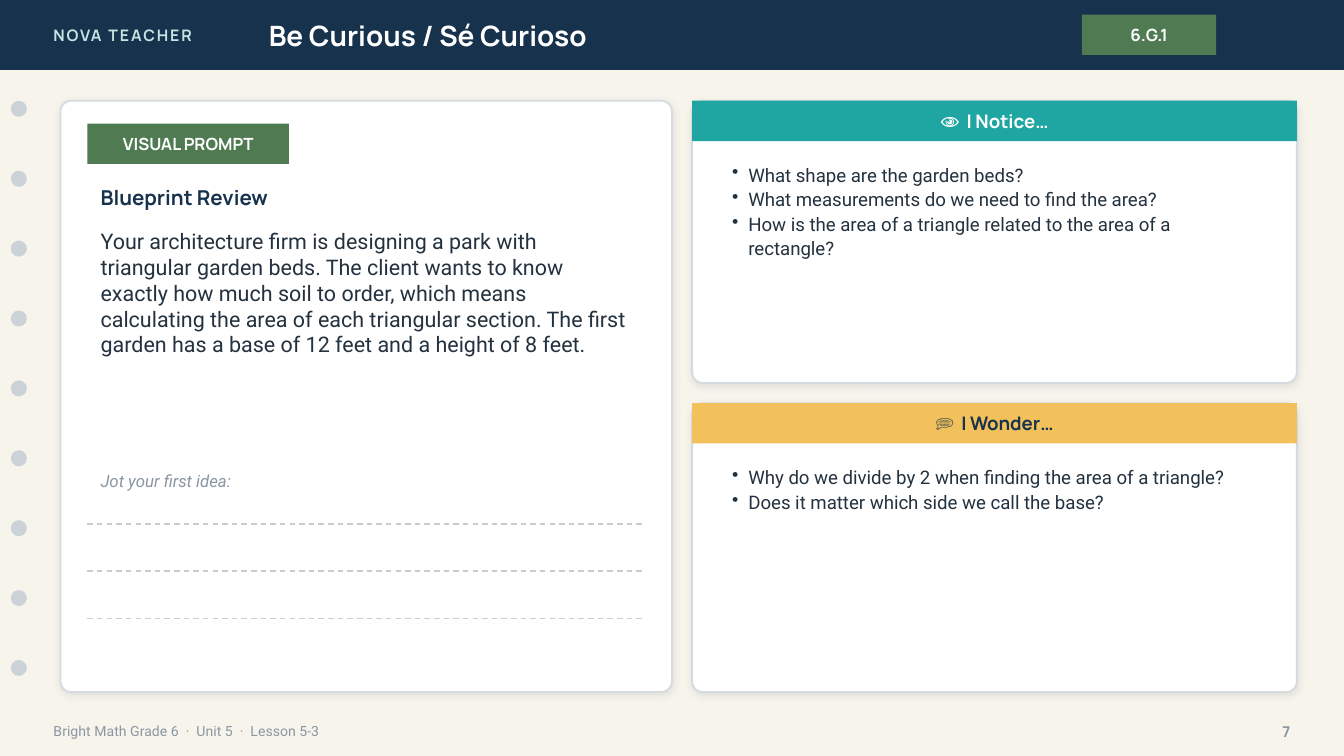
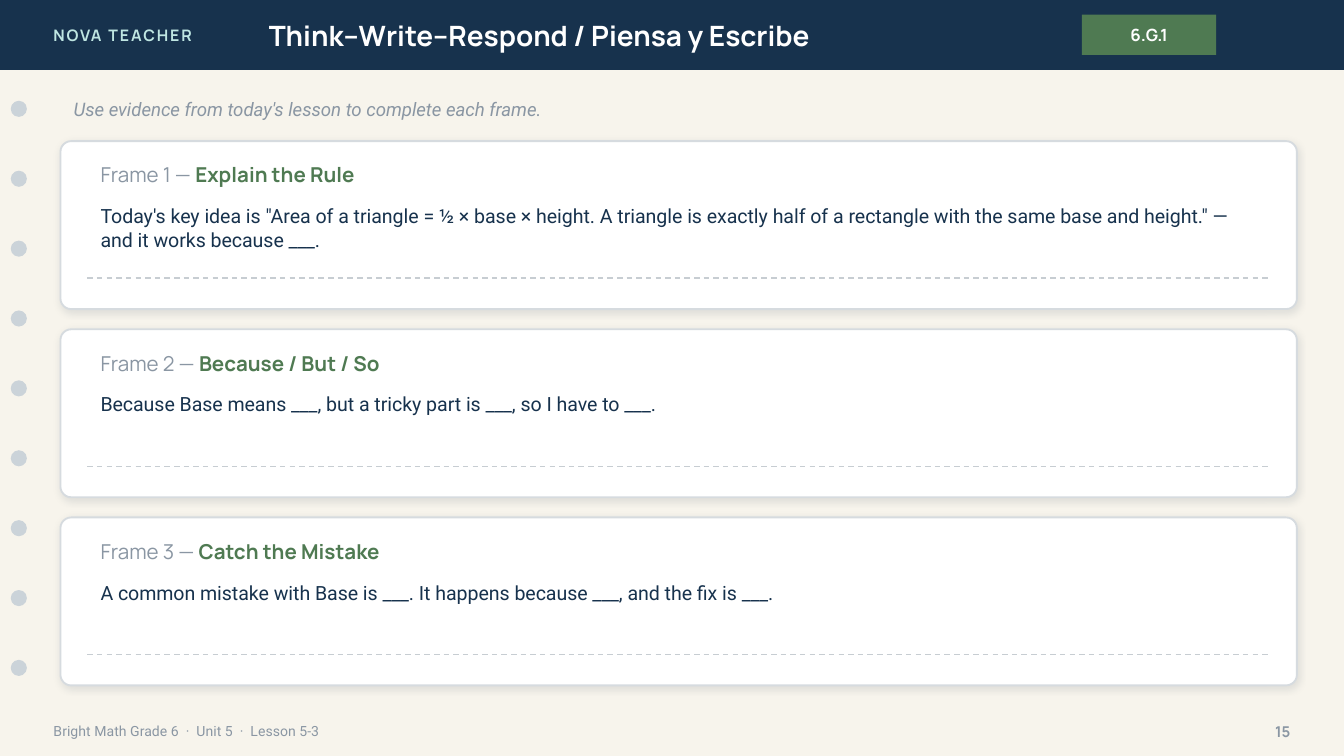
from dataclasses import dataclass

from lxml import etree
from pptx import Presentation
from pptx.dml.color import RGBColor
from pptx.enum.dml import MSO_LINE
from pptx.enum.shapes import MSO_CONNECTOR, MSO_SHAPE
from pptx.enum.text import MSO_ANCHOR, MSO_AUTO_SIZE, PP_ALIGN
from pptx.oxml import parse_xml
from pptx.oxml.ns import nsdecls, qn
from pptx.util import Inches, Pt

COLORS = {
    "paper": "F7F4EC",
    "navy": "17324D",
    "mint": "BFE6E2",
    "white": "FFFFFF",
    "green": "4F7A52",
    "teal": "1FA6A2",
    "yellow": "F2C15B",
    "hole": "CBD3D9",
    "muted": "8A96A3",
    "ink": "24323F",
    "card_edge": "D6DBDF",
    "writing_line": "C7CDD2",
    "shadow": "1C2E42",
}
HEADING_FONT = "Manrope"
BODY_FONT = "Roboto"
STANDARD = "6.G.1"
FOOTER = "Bright Math Grade 6  ·  Unit 5  ·  Lesson 5-3"
CARD_RADIUS = 0.08
BULLET_INDENT = 0.12


@dataclass(frozen=True)
class Style:
    size: float
    color: str
    name: str = BODY_FONT
    bold: bool = False
    italic: bool = False
    align: PP_ALIGN = PP_ALIGN.LEFT


BRAND = Style(8.5, "mint", HEADING_FONT, bold=True)
TITLE = Style(15, "white", HEADING_FONT, bold=True)
TAG = Style(9, "white", HEADING_FONT, bold=True, align=PP_ALIGN.CENTER)
FOOT = Style(7.5, "muted")
PAGE = Style(8, "muted", HEADING_FONT, bold=True, align=PP_ALIGN.RIGHT)
SUBHEAD = Style(11, "navy", HEADING_FONT, bold=True)
PROMPT = Style(11.5, "ink")
JOT = Style(9, "muted", italic=True)
HINT = Style(10, "muted", italic=True)
LIST = Style(10, "ink")
FRAME_NUMBER = Style(11, "muted", HEADING_FONT)
FRAME_NAME = Style(11, "green", HEADING_FONT, bold=True)
FRAME_TEXT = Style(10.5, "navy")


def rgb(color):
    return RGBColor.from_string(COLORS[color])


def set_font(font, style):
    font.name = style.name
    font.size = Pt(style.size)
    font.bold = style.bold
    font.italic = style.italic
    font.color.rgb = rgb(style.color)


def write(shape, text, style, anchor=MSO_ANCHOR.MIDDLE):
    """Put one paragraph of uniform text in a shape and return the paragraph."""
    frame = shape.text_frame
    frame.word_wrap = True
    frame.auto_size = MSO_AUTO_SIZE.NONE
    frame.vertical_anchor = anchor
    paragraph = frame.paragraphs[0]
    paragraph.text = text
    paragraph.alignment = style.align
    set_font(paragraph.font, style)
    return paragraph


def add_text(slide, box, text, style, anchor=MSO_ANCHOR.MIDDLE):
    shape = slide.shapes.add_textbox(*map(Inches, box))
    return write(shape, text, style, anchor)


def add_bullets(slide, box, items):
    frame = slide.shapes.add_textbox(*map(Inches, box)).text_frame
    frame.word_wrap = True
    for index, item in enumerate(items):
        paragraph = frame.add_paragraph() if index else frame.paragraphs[0]
        paragraph.text = item
        paragraph.line_spacing = 1.1
        properties = paragraph._p.get_or_add_pPr()
        properties.set("marL", str(Inches(BULLET_INDENT)))
        properties.set("indent", str(-Inches(BULLET_INDENT)))
        etree.SubElement(properties, qn("a:buChar"), char="•")
        set_font(paragraph.font, LIST)


def add_block(slide, box, color, kind=MSO_SHAPE.RECTANGLE):
    shape = slide.shapes.add_shape(kind, *map(Inches, box))
    shape.shadow.inherit = False
    shape.fill.solid()
    shape.fill.fore_color.rgb = rgb(color)
    shape.line.fill.background()
    return shape


def add_label(slide, box, color, text, style=TAG):
    write(add_block(slide, box, color), text, style)


def add_card(slide, box):
    """Add a white rounded panel with a thin edge and a soft shadow."""
    card = add_block(slide, box, "white", MSO_SHAPE.ROUNDED_RECTANGLE)
    card.adjustments[0] = CARD_RADIUS / min(box[2:])
    card.line.color.rgb = rgb("card_edge")
    card.line.width = Pt(1)
    effects = card.element.spPr.find(qn("a:effectLst"))
    effects.append(parse_xml(
        f'<a:outerShdw {nsdecls("a")} blurRad="{Pt(4)}" dist="{Pt(1)}" '
        f'dir="5400000" algn="bl" rotWithShape="0">'
        f'<a:srgbClr val="{COLORS["shadow"]}"><a:alpha val="10000"/></a:srgbClr>'
        f'</a:outerShdw>'))


def add_writing_line(slide, left, right, top):
    line = slide.shapes.add_connector(
        MSO_CONNECTOR.STRAIGHT, Inches(left), Inches(top), Inches(right), Inches(top))
    line.line.color.rgb = rgb("writing_line")
    line.line.width = Pt(0.75)
    line.line.dash_style = MSO_LINE.DASH
    etree.SubElement(line.element.spPr, qn("a:effectLst"))


def add_page(presentation, title, number):
    """Add a slide with the header band, binder holes and footer."""
    slide = presentation.slides.add_slide(presentation.slide_layouts[5])
    slide.background.fill.solid()
    slide.background.fill.fore_color.rgb = rgb("paper")

    band = add_block(slide, (0, 0, 10, 0.52), "navy")
    brand = add_text(slide, (0.3, 0, 2.4, 0.52), "NOVA TEACHER", BRAND)
    brand.runs[0].font._element.set("spc", "100")
    heading = slide.shapes.title
    heading.left, heading.top, heading.width, heading.height = map(
        Inches, (1.9, 0, 5.6, 0.52))
    write(heading, title, TITLE)
    band.element.addnext(heading.element)
    add_label(slide, (8.05, 0.11, 1, 0.3), "green", STANDARD)

    for row in range(9):
        add_block(slide, (0.08, 0.75 + 0.52 * row, 0.12, 0.12), "hole", MSO_SHAPE.OVAL)

    add_text(slide, (0.3, 5.3, 7, 0.28), FOOTER, FOOT)
    add_text(slide, (9.2, 5.3, 0.5, 0.28), str(number), PAGE)
    return slide


def add_list_card(slide, top, height, color, heading, text_color, items):
    add_card(slide, (5.15, top, 4.5, height))
    style = Style(10, text_color, HEADING_FONT, bold=True, align=PP_ALIGN.CENTER)
    add_label(slide, (5.15, top, 4.5, 0.3), color, heading, style)
    add_bullets(slide, (5.35, top + 0.4, 4.1, height - 0.5), items)


def add_frame_card(slide, top, number, name, sentence):
    add_card(slide, (0.45, top, 9.2, 1.25))
    heading = add_text(slide, (0.65, top + 0.1, 8.8, 0.3),
                       f"Frame {number} — ", FRAME_NUMBER)
    run = heading.add_run()
    run.text = name
    set_font(run.font, FRAME_NAME)
    add_text(slide, (0.65, top + 0.42, 8.8, 0.4), sentence, FRAME_TEXT, MSO_ANCHOR.TOP)
    add_writing_line(slide, 0.65, 9.45, top + 1.02)


def build_curious_slide(presentation):
    slide = add_page(presentation, "Be Curious / Sé Curioso", 7)
    add_card(slide, (0.45, 0.75, 4.55, 4.4))
    add_label(slide, (0.65, 0.92, 1.5, 0.3), "green", "VISUAL PROMPT")
    add_text(slide, (0.65, 1.32, 4.15, 0.3), "Blueprint Review", SUBHEAD)
    add_text(
        slide, (0.65, 1.65, 4.15, 1.7),
        "Your architecture firm is designing a park with triangular garden beds. "
        "The client wants to know exactly how much soil to order, which means "
        "calculating the area of each triangular section. The first garden has "
        "a base of 12 feet and a height of 8 feet.",
        PROMPT, MSO_ANCHOR.TOP)
    add_text(slide, (0.65, 3.45, 4, 0.25), "Jot your first idea:", JOT)
    for row in range(3):
        add_writing_line(slide, 0.65, 4.8, 3.9 + 0.35 * row)

    add_list_card(slide, 0.75, 2.1, "teal", "👁  I Notice…", "white", [
        "What shape are the garden beds?",
        "What measurements do we need to find the area?",
        "How is the area of a triangle related to the area of a rectangle?",
    ])
    add_list_card(slide, 3, 2.15, "yellow", "💭  I Wonder…", "navy", [
        "Why do we divide by 2 when finding the area of a triangle?",
        "Does it matter which side we call the base?",
    ])


def build_writing_slide(presentation):
    slide = add_page(presentation, "Think–Write–Respond / Piensa y Escribe", 15)
    add_text(slide, (0.45, 0.66, 9.2, 0.3),
             "Use evidence from today's lesson to complete each frame.", HINT)
    frames = [
        ("Explain the Rule",
         'Today\'s key idea is "Area of a triangle = ½ × base × height. A triangle is '
         'exactly half of a rectangle with the same base and height." — and it works '
         'because ___.'),
        ("Because / But / So",
         "Because Base means ___, but a tricky part is ___, so I have to ___."),
        ("Catch the Mistake",
         "A common mistake with Base is ___. It happens because ___, "
         "and the fix is ___."),
    ]
    for index, (name, sentence) in enumerate(frames):
        add_frame_card(slide, 1.05 + 1.4 * index, index + 1, name, sentence)


def main():
    presentation = Presentation()
    presentation.slide_width = Inches(10)
    presentation.slide_height = Inches(10) * 9 // 16
    build_curious_slide(presentation)
    build_writing_slide(presentation)
    presentation.save("out.pptx")


if __name__ == "__main__":
    main()
